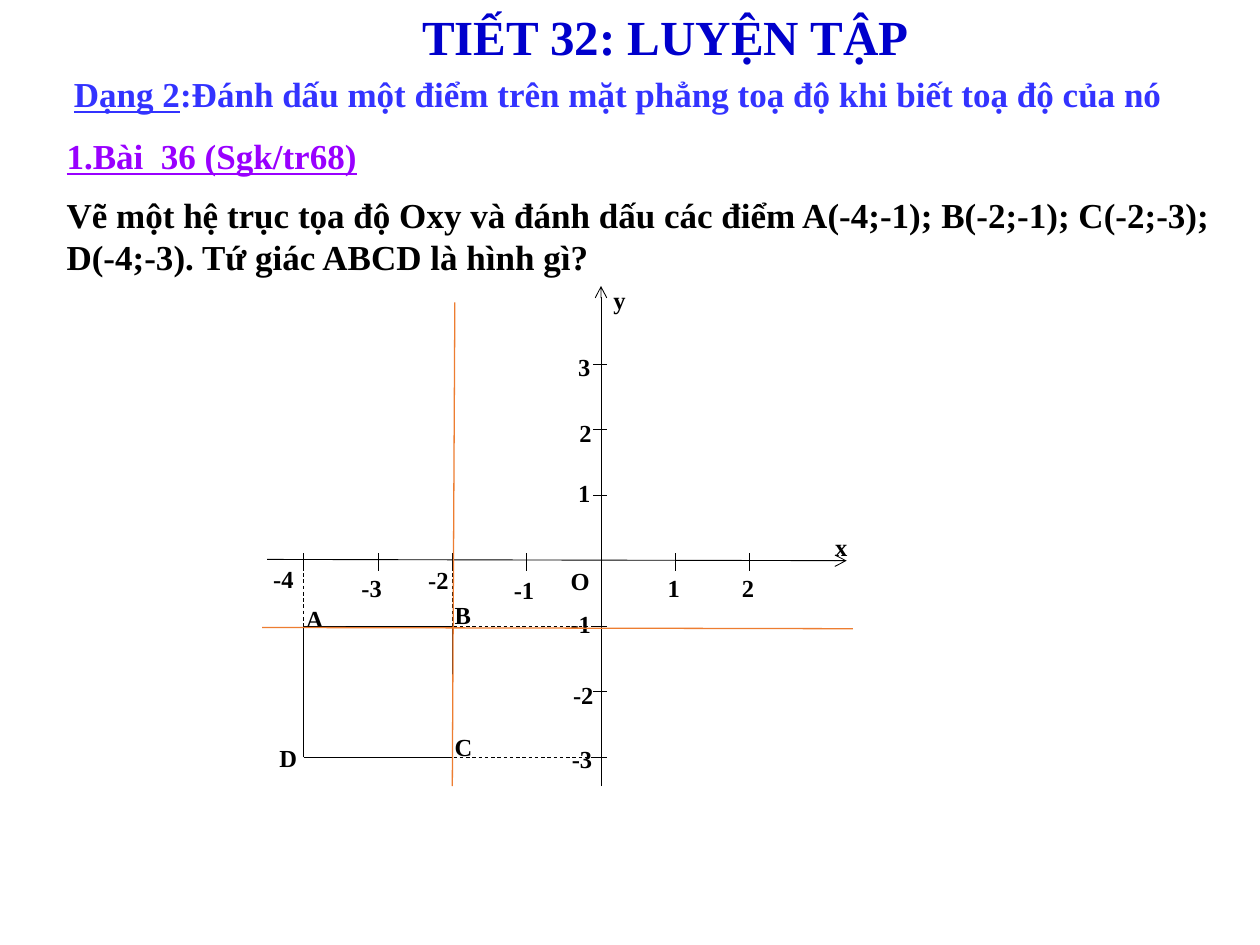
from dataclasses import dataclass

from lxml import etree
from pptx import Presentation
from pptx.dml.color import RGBColor
from pptx.enum.dml import MSO_LINE
from pptx.enum.shapes import MSO_CONNECTOR
from pptx.enum.text import MSO_ANCHOR, MSO_AUTO_SIZE, PP_ALIGN
from pptx.oxml.ns import qn
from pptx.util import Inches, Pt

STRAIGHT = MSO_CONNECTOR.STRAIGHT
DASH = MSO_LINE.DASH
LEFT, CENTER = PP_ALIGN.LEFT, PP_ALIGN.CENTER
TOP = MSO_ANCHOR.TOP
NO_FIT = MSO_AUTO_SIZE.NONE
TITLE_ONLY = 5


@dataclass(frozen=True)
class Theme:
    font: str = "Times New Roman"
    title: str = "0000CC"
    topic: str = "3333FF"
    exercise: str = "9900FF"
    ink: str = "000000"
    guide: str = "ED7D31"
    title_size: int = 28
    body_size: int = 20
    label_size: int = 14
    thin: float = 0.5
    medium: float = 0.75


THEME = Theme()

TITLE = "TIẾT 32: LUYỆN TẬP"
TOPIC = ("Dạng 2", ":Đánh dấu một điểm trên mặt phẳng toạ độ khi biết toạ độ của nó")
EXERCISE = "1.Bài  36 (Sgk/tr68)"
QUESTION = (
    "Vẽ một hệ trục tọa độ Oxy và đánh dấu các điểm A(-4;-1); B(-2;-1); "
    "C(-2;-3); D(-4;-3). Tứ giác ABCD là hình gì?"
)

ORIGIN_X, ORIGIN_Y = 4.77, 4.45
UNIT_X, UNIT_Y = 0.59, 0.52
X_TICKS = (-4, -3, -2, -1, 1, 2)
Y_TICKS = (-3, -2, -1, 1, 2, 3)
SQUARE = ((-4, -1), (-2, -1), (-2, -3), (-4, -3))
AXES = (((2.12, 4.44), (6.72, 4.45)), ((4.77, 6.24), (4.77, 2.27)))
GUIDES = (((3.61, 2.4), (3.59, 6.24)), ((2.08, 4.98), (6.77, 4.99)))

LABEL_WIDTH, LABEL_HEIGHT = 0.47, 0.39
LABELS = (
    ("x", 6.53, 4.16), ("y", 4.77, 2.2), ("O", 4.43, 4.43),
    ("-4", 2.07, 4.41), ("-3", 2.77, 4.48), ("-2", 3.3, 4.42),
    ("-1", 3.98, 4.5), ("1", 5.2, 4.48), ("2", 5.79, 4.48),
    ("3", 4.49, 2.73), ("2", 4.5, 3.25), ("1", 4.49, 3.73),
    ("-1", 4.43, 4.77), ("-2", 4.45, 5.33), ("-3", 4.44, 5.84),
    ("A", 2.33, 4.73), ("B", 3.51, 4.7), ("C", 3.51, 5.74), ("D", 2.12, 5.83),
)


def plot(x, y):
    return ORIGIN_X + x * UNIT_X, ORIGIN_Y - y * UNIT_Y


def format_span(span, size, color, underline=False):
    span.font.name = THEME.font
    span.font.size = Pt(size)
    span.font.bold = True
    span.font.underline = underline
    span.font.color.rgb = RGBColor.from_string(color)


def add_text(page, text, place, size, color, underline=False):
    box = page.shapes.add_textbox(*(Inches(value) for value in place))
    box.text_frame.word_wrap = True
    box.text_frame.text = text
    para = box.text_frame.paragraphs[0]
    format_span(para.runs[0], size, color, underline)
    return para


def add_line(page, start, end, width=THEME.thin, color=THEME.ink, dashed=False, arrow=False):
    points = [Inches(value) for value in (*start, *end)]
    connector = page.shapes.add_connector(STRAIGHT, *points)
    connector.line.width = Pt(width)
    connector.line.color.rgb = RGBColor.from_string(color)
    if dashed:
        connector.line.dash_style = DASH
    properties = connector.line._get_or_add_ln()
    if arrow:
        etree.SubElement(properties, qn("a:tailEnd"), type="arrow")
    etree.SubElement(connector._element.spPr, qn("a:effectLst"))


def add_headings(page):
    title = page.shapes.title
    title.left, title.top = Inches(3.25), Inches(0)
    title.width, title.height = Inches(4.25), Inches(0.57)
    frame = title.text_frame
    frame.text = TITLE
    frame.auto_size = NO_FIT
    frame.vertical_anchor = TOP
    frame.paragraphs[0].alignment = LEFT
    format_span(frame.paragraphs[0].runs[0], THEME.title_size, THEME.title)

    topic = add_text(page, TOPIC[0], (0.42, 0.53, 8.97, 0.44),
                     THEME.body_size, THEME.topic, underline=True)
    topic.alignment = CENTER
    rest = topic.add_run()
    rest.text = TOPIC[1]
    format_span(rest, THEME.body_size, THEME.topic)

    add_text(page, EXERCISE, (0.43, 1.02, 3.5, 0.43),
             THEME.body_size, THEME.exercise, underline=True)
    add_text(page, QUESTION, (0.43, 1.49, 9.33, 0.77), THEME.body_size, THEME.ink)


def add_graph(page):
    for start, end in AXES:
        add_line(page, start, end, arrow=True)
    for value in X_TICKS:
        x, y = plot(value, 0)
        add_line(page, (x, y - 0.06), (x, y + 0.08))
    for value in Y_TICKS:
        x, y = plot(0, value)
        add_line(page, (x - 0.06, y), (x + 0.05, y))

    for text, left, top in LABELS:
        para = add_text(page, text, (left, top, LABEL_WIDTH, LABEL_HEIGHT),
                        THEME.label_size, THEME.ink)
        para.line_spacing = 1.07
        para.space_after = Pt(8)

    for x in (-4, -2):
        add_line(page, plot(x, 0), plot(x, -3), dashed=True)
    for y in (-1, -3):
        add_line(page, plot(-4, y), plot(0, y), dashed=True)
    for start, end in zip(SQUARE, SQUARE[1:] + SQUARE[:1]):
        add_line(page, plot(*start), plot(*end), THEME.medium)
    for start, end in GUIDES:
        add_line(page, start, end, THEME.medium, THEME.guide)


def main():
    deck = Presentation()
    deck.slide_width, deck.slide_height = Inches(10), Inches(7.5)
    page = deck.slides.add_slide(deck.slide_layouts[TITLE_ONLY])
    add_headings(page)
    add_graph(page)
    deck.save("out.pptx")


if __name__ == "__main__":
    main()
